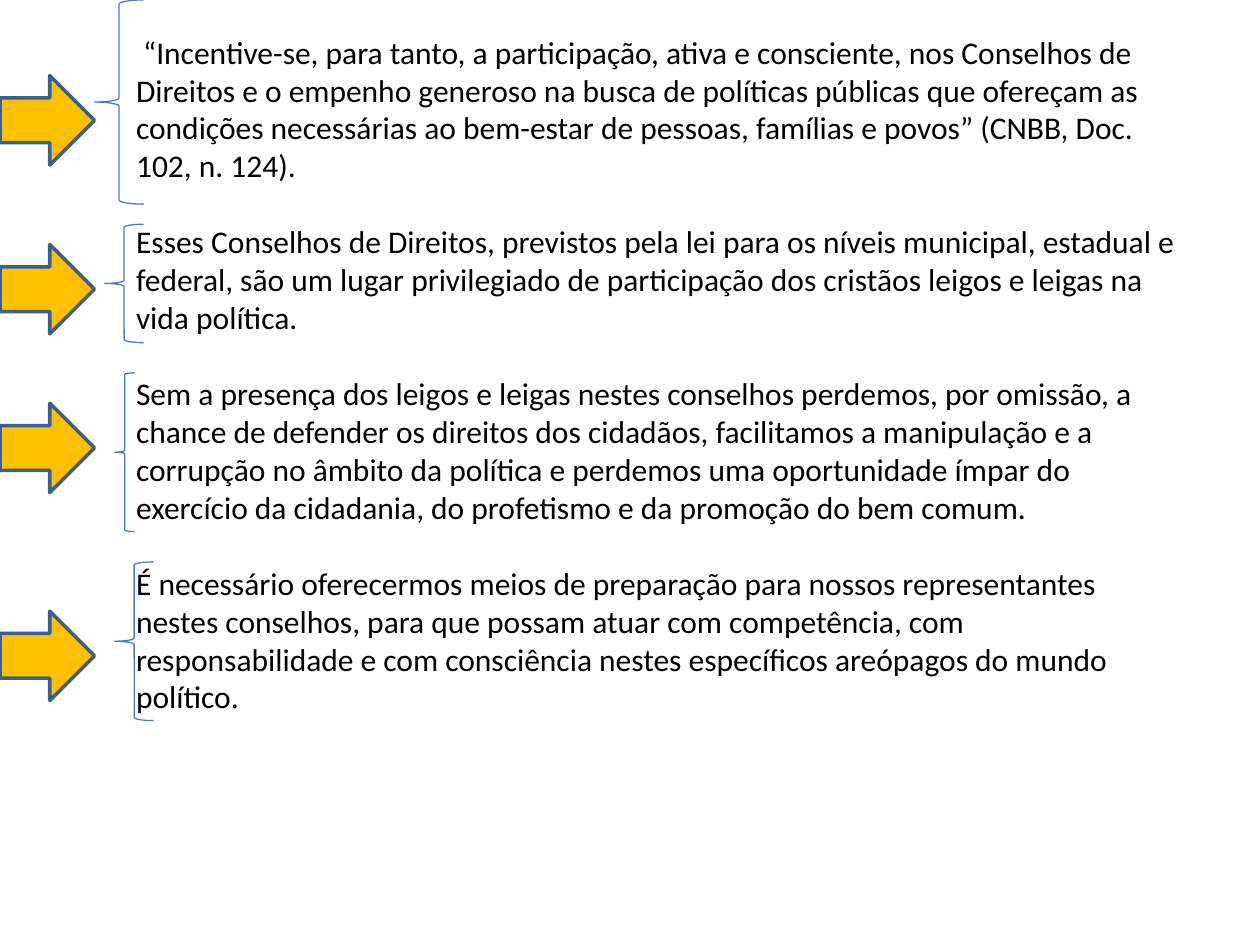
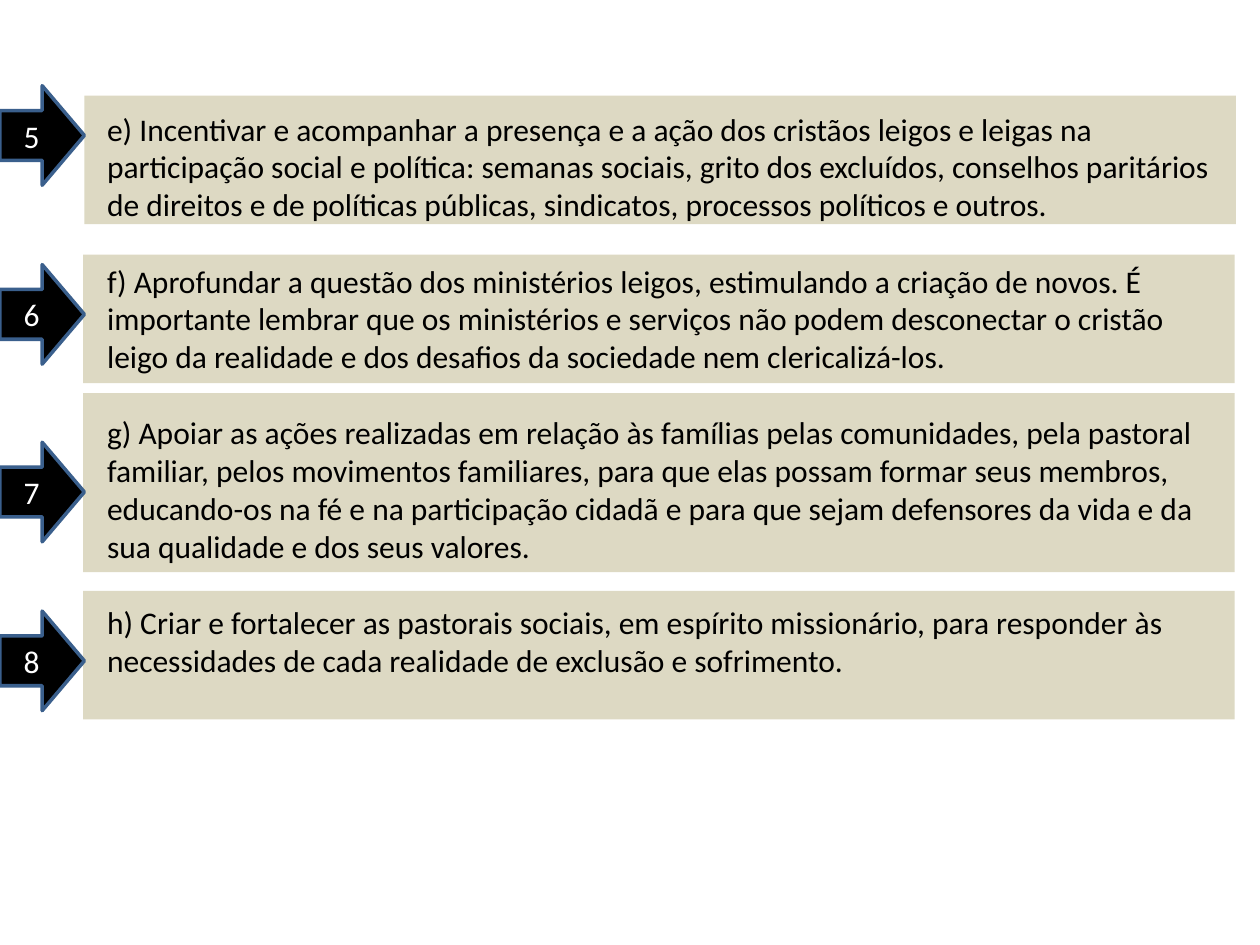
from lxml import etree
from pptx import Presentation
from pptx.dml.color import RGBColor
from pptx.enum.shapes import MSO_SHAPE
from pptx.enum.text import MSO_ANCHOR, MSO_AUTO_SIZE, PP_ALIGN
from pptx.oxml.ns import qn
from pptx.util import Inches, Pt

ARROW, BRACE, RECT = MSO_SHAPE.RIGHT_ARROW, MSO_SHAPE.LEFT_BRACE, MSO_SHAPE.RECTANGLE
TOP, MIDDLE = MSO_ANCHOR.TOP, MSO_ANCHOR.MIDDLE
LEFT, CENTER = PP_ALIGN.LEFT, PP_ALIGN.CENTER
NO_FIT = MSO_AUTO_SIZE.NONE

# Shared style
FONT, SIZE, LINE_GAP = "Calibri", 18, 22
BLACK, WHITE, GOLD, SAND = "000000", "FFFFFF", "FFC000", "DDD9C3"
ARROW_LINE, BRACE_LINE = "3A5F8C", "4B7EBC"
COLS, ROWS = 100, 75


def color(hex_text):
    return RGBColor.from_string(hex_text)


def write(p, text, size=SIZE, ink=BLACK, align=LEFT, after=0):
    p.alignment = align
    p.space_before, p.space_after = Pt(0), Pt(after)
    r = p.add_run()
    r.text = text
    r.font.name, r.font.size = FONT, Pt(size)
    r.font.color.rgb = color(ink)


class Deck:
    """Places elements on a grid of COLS by ROWS cells."""

    def __init__(self):
        self.prs = Presentation()
        self.prs.slide_width, self.prs.slide_height = Inches(10), Inches(7.5)
        self.s = None

    def box(self, col, row, cols, rows):
        cw, rh = self.prs.slide_width / COLS, self.prs.slide_height / ROWS
        return [round(n) for n in (col * cw, row * rh, cols * cw, rows * rh)]

    def slide(self):
        self.s = self.prs.slides.add_slide(self.prs.slide_layouts[1])
        title = self.s.shapes.title.element
        title.getparent().remove(title)

    def shape(self, kind, *cells, fill=None, line=None, width=2):
        sp = self.s.shapes.add_shape(kind, *self.box(*cells))
        sp.shadow.inherit = False
        if fill:
            sp.fill.solid()
            sp.fill.fore_color.rgb = color(fill)
        else:
            sp.fill.background()
        if line:
            sp.line.color.rgb = color(line)
            sp.line.width = Pt(width)
        else:
            sp.line.fill.background()
        return sp

    def arrow(self, *cells, fill, label=None):
        sp = self.shape(ARROW, *cells, fill=fill, line=ARROW_LINE)
        if label:
            sp.text_frame.vertical_anchor = MIDDLE
            write(sp.text_frame.paragraphs[0], label, ink=WHITE, align=CENTER)

    def brace(self, *cells):
        self.shape(BRACE, *cells, line=BRACE_LINE, width=0.75)

    def band(self, *cells):
        self.shape(RECT, *cells, fill=SAND)

    def body(self, *cells, texts):
        sp = self.s.placeholders[1]
        sp.left, sp.top, sp.width, sp.height = self.box(*cells)
        sp.element.getparent().append(sp.element)  # in front of the shapes so far
        tf = sp.text_frame
        tf.word_wrap, tf.auto_size, tf.vertical_anchor = True, NO_FIT, TOP
        for i, text in enumerate(texts):
            p = tf.add_paragraph() if i else tf.paragraphs[0]
            write(p, text, after=LINE_GAP)
            pPr = p._p.get_or_add_pPr()
            pPr.set("marL", "0")
            pPr.set("indent", "0")
            etree.SubElement(pPr, qn("a:buNone"))


COUNCILS = [
    " “Incentive-se, para tanto, a participação, ativa e consciente, nos Conselhos de "
    "Direitos e o empenho generoso na busca de políticas públicas que ofereçam as "
    "condições necessárias ao bem-estar de pessoas, famílias e povos” (CNBB, Doc. 102, n. 124).",
    "Esses Conselhos de Direitos, previstos pela lei para os níveis municipal, estadual e "
    "federal, são um lugar privilegiado de participação dos cristãos leigos e leigas na "
    "vida política.",
    "Sem a presença dos leigos e leigas nestes conselhos perdemos, por omissão, a chance de "
    "defender os direitos dos cidadãos, facilitamos a manipulação e a corrupção no âmbito da "
    "política e perdemos uma oportunidade ímpar do exercício da cidadania, do profetismo e da "
    "promoção do bem comum.",
    "É necessário oferecermos meios de preparação para nossos representantes nestes "
    "conselhos, para que possam atuar com competência, com responsabilidade e com "
    "consciência nestes específicos areópagos do mundo político.",
]
ACTIONS = [
    "e) Incentivar e acompanhar a presença e a ação dos cristãos leigos e leigas na "
    "participação social e política: semanas sociais, grito dos excluídos, conselhos "
    "paritários de direitos e de políticas públicas, sindicatos, processos políticos e outros.",
    "f) Aprofundar a questão dos ministérios leigos, estimulando a criação de novos. É "
    "importante lembrar que os ministérios e serviços não podem desconectar o cristão leigo "
    "da realidade e dos desafios da sociedade nem clericalizá-los.",
    "g) Apoiar as ações realizadas em relação às famílias pelas comunidades, pela pastoral "
    "familiar, pelos movimentos familiares, para que elas possam formar seus membros, "
    "educando-os na fé e na participação cidadã e para que sejam defensores da vida e da sua "
    "qualidade e dos seus valores.",
    "h) Criar e fortalecer as pastorais sociais, em espírito missionário, para responder às "
    "necessidades de cada realidade de exclusão e sofrimento.",
]


def councils_slide(deck):
    deck.slide()
    deck.body(9.8, 2.1, 85, 58.6, texts=COUNCILS)
    for row in (6, 19.4, 32, 48.5):
        deck.arrow(0, row, 7.5, 7.1, fill=GOLD)
    for cells in ((7.5, 0, 3.9, 16.2), (8.3, 17.8, 3.1, 9.4),
                  (9.1, 29.6, 1.6, 12.6), (9.1, 44.6, 3.1, 12.6)):
        deck.brace(*cells)


def actions_slide(deck):
    deck.slide()
    # Bands behind the list: column, row, height
    for col, row, rows in ((6.7, 7.6, 10.2), (6.6, 20.2, 10.2),
                           (6.6, 31.2, 14.2), (6.6, 46.9, 10.2)):
        deck.band(col, row, 91.4, rows)
    deck.body(7.5, 8.2, 89.8, 55.6, texts=ACTIONS)
    # Numbered arrows
    for number, row in enumerate((6.8, 21, 35.1, 48.5), start=5):
        deck.arrow(0, row, 6.7, 7.9, fill=BLACK, label=str(number))


def main():
    deck = Deck()
    councils_slide(deck)
    actions_slide(deck)
    deck.prs.save("out.pptx")


if __name__ == "__main__":
    main()
